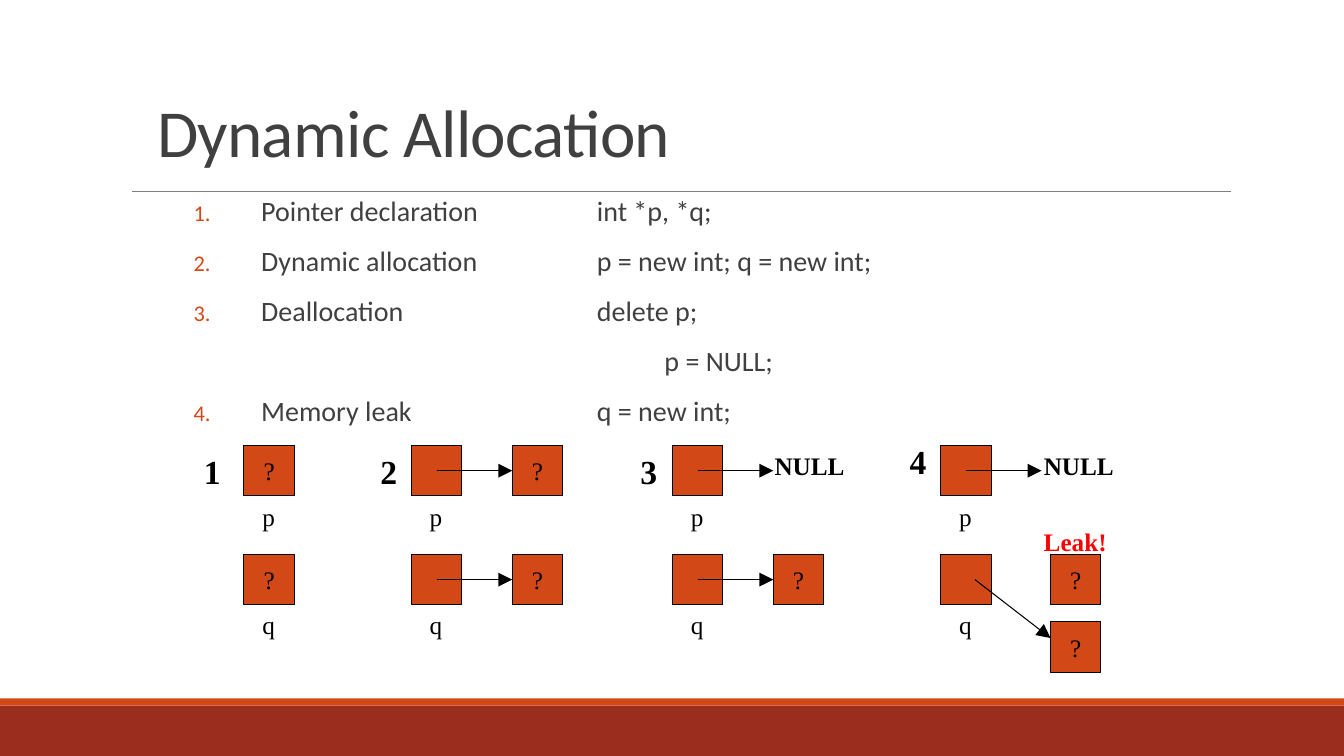
from dataclasses import dataclass

from lxml import etree
from pptx import Presentation
from pptx.dml.color import RGBColor
from pptx.enum.shapes import MSO_CONNECTOR, MSO_SHAPE
from pptx.enum.text import MSO_ANCHOR, MSO_AUTO_SIZE, PP_ALIGN
from pptx.oxml.ns import qn
from pptx.util import Inches, Pt

RECT = MSO_SHAPE.RECTANGLE
STRAIGHT = MSO_CONNECTOR.STRAIGHT
CENTER = PP_ALIGN.CENTER
MIDDLE, BOTTOM = MSO_ANCHOR.MIDDLE, MSO_ANCHOR.BOTTOM
GROW = MSO_AUTO_SIZE.SHAPE_TO_FIT_TEXT
LEFT_SIDE = 1


@dataclass(frozen=True)
class Theme:
    accent: str = "D34817"
    footer: str = "9B2D1F"
    rule: str = "808080"
    text: str = "404040"
    ink: str = "000000"
    alert: str = "FF0000"
    sans: str = "Calibri"
    serif: str = "Times New Roman"
    title: int = 48
    step: int = 24
    body: int = 20
    label: int = 18


class SlideBuilder:
    def __init__(self, prs, theme):
        self.theme = theme
        self.s = prs.slides.add_slide(prs.slide_layouts[6])

    def style(self, p, size, font, color, bold=False):
        for r in p.runs:
            r.font.size = Pt(size)
            r.font.name = font
            r.font.bold = bold
            r.font.color.rgb = RGBColor.from_string(color)

    def rect(self, x, y, w, h, fill):
        sp = self.s.shapes.add_shape(RECT, Inches(x), Inches(y), Inches(w), Inches(h))
        sp.shadow.inherit = False
        sp.fill.solid()
        sp.fill.fore_color.rgb = RGBColor.from_string(fill)
        sp.line.fill.background()
        return sp

    def cell(self, x, y, text=""):
        """Draw one memory cell, with its value if it has one."""
        t = self.theme
        sp = self.rect(x, y, CELL, CELL, t.accent)
        sp.line.color.rgb = RGBColor.from_string(t.ink)
        sp.line.width = Pt(0.75)
        if text:
            tf = sp.text_frame
            tf.text = text
            tf.word_wrap = False
            tf.vertical_anchor = MIDDLE
            tf.paragraphs[0].alignment = CENTER
            self.style(tf.paragraphs[0], t.label, t.serif, t.ink)
        return sp

    def label(self, x, y, w, h, text, size, color, bold=False):
        sp = self.s.shapes.add_textbox(Inches(x), Inches(y), Inches(w), Inches(h))
        tf = sp.text_frame
        tf.text = text
        tf.word_wrap = False
        tf.auto_size = GROW
        tf.paragraphs[0].alignment = CENTER
        self.style(tf.paragraphs[0], size, self.theme.serif, color, bold)

    def line(self, x1, y1, x2, y2, color, width):
        c = self.s.shapes.add_connector(
            STRAIGHT, Inches(x1), Inches(y1), Inches(x2), Inches(y2))
        c.line.color.rgb = RGBColor.from_string(color)
        c.line.width = Pt(width)
        etree.SubElement(c._element.spPr, qn("a:effectLst"))
        return c

    def arrow(self, x1, y1, x2, y2, target=None):
        c = self.line(x1, y1, x2, y2, self.theme.ink, 0.75)
        etree.SubElement(c.line._get_or_add_ln(), qn("a:tailEnd"),
                         type="triangle", w="lg", len="lg")
        if target is not None:
            c.end_connect(target, LEFT_SIDE)

    def title(self, x, y, w, h, text):
        t = self.theme
        tf = self.s.shapes.add_textbox(
            Inches(x), Inches(y), Inches(w), Inches(h)).text_frame
        tf.text = text
        tf.word_wrap = True
        tf.vertical_anchor = BOTTOM
        p = tf.paragraphs[0]
        p.line_spacing = 0.85
        self.style(p, t.title, t.sans, t.text)
        p.runs[0].font._element.set("spc", "-50")

    def number(self, p, start):
        pPr = p._p.get_or_add_pPr()
        color = etree.SubElement(pPr, qn("a:buClr"))
        etree.SubElement(color, qn("a:srgbClr"), val=self.theme.accent)
        etree.SubElement(pPr, qn("a:buSzPct"), val="80000")
        bullet = etree.SubElement(pPr, qn("a:buAutoNum"), type="arabicPeriod")
        if start > 1:
            bullet.set("startAt", str(start))

    def steps(self, x, y, w, h, items):
        """Write a list of (text, start) pairs; a start of None leaves out the number."""
        t = self.theme
        tf = self.s.shapes.add_textbox(
            Inches(x), Inches(y), Inches(w), Inches(h)).text_frame
        tf.word_wrap = True
        tf.margin_left = tf.margin_right = 0
        tf.text = "\n".join(text for text, _ in items)
        for p, (_, start) in zip(tf.paragraphs, items):
            p.line_spacing = 0.9
            p.space_before, p.space_after = Pt(12), Pt(2)
            pPr = p._p.get_or_add_pPr()
            pPr.set("marL", str(Inches(0.67)))
            pPr.set("indent", str(Inches(-0.67)))
            pPr.set("defTabSz", str(Inches(1)))
            if start:
                self.number(p, start)
            self.style(p, t.body, t.sans, t.text)


CELL = 0.5
ROWS = {"p": 4.42, "q": 5.5}
STEPS = [
    ("Pointer declaration\t\tint *p, *q;", 1),
    ("Dynamic allocation\t\tp = new int; q = new int;", 1),
    ("Deallocation\t\tdelete p;", 1),
    ("\t\t\t\t\tp = NULL;", None),
    ("Memory leak\t\tq = new int;", 4),
]
# Step number, its left and top, left of the pointer cells, their value
STAGES = [
    ("1", 1.92, 4.42, 2.42, "?"),
    ("2", 3.67, 4.42, 4.08, ""),
    ("3", 6.25, 4.42, 6.67, ""),
    ("4", 8.92, 4.33, 9.33, ""),
]
# Left of the pointer cell, left of its target, row
ALLOCATED = [(4.08, 5.08, "p"), (4.08, 5.08, "q"), (6.67, 7.67, "q")]
# Left of the arrow, left of the word
NULLS = [(6.92, 7.58), (9.58, 10.25)]
LEAK_X, NEW_Y = 10.42, 6.17


def main():
    prs = Presentation()
    prs.slide_width, prs.slide_height = Inches(13.33), Inches(7.5)
    t = Theme()
    b = SlideBuilder(prs, t)

    b.rect(0, 7, 13.33, 0.5, t.footer)
    b.rect(0, 6.93, 13.33, 0.07, t.accent)
    b.line(1.31, 1.9, 12.21, 1.9, t.rule, 0.5)
    b.title(1.46, 0.5, 8.5, 1.25, "Dynamic Allocation")
    b.steps(1.92, 1.91, 9.58, 2.67, STEPS)

    for step, step_x, step_y, x, value in STAGES:
        b.label(step_x, step_y, 0.37, 0.5, step, t.step, t.ink, True)
        for name, y in ROWS.items():
            b.cell(x, y, value)
            b.label(x + 0.08, y + CELL, 0.33, 0.4, name, t.label, t.ink)

    for x, target_x, row in ALLOCATED:
        y = ROWS[row]
        target = b.cell(target_x, y, "?")
        b.arrow(x + CELL / 2, y + CELL / 2, target_x, y + CELL / 2, target)

    for x, word_x in NULLS:
        y = ROWS["p"]
        b.arrow(x, y + CELL / 2, x + 0.75, y + CELL / 2)
        b.label(word_x, y, 0.9, 0.4, "NULL", t.label, t.ink, True)

    for y in (ROWS["q"], NEW_Y):
        b.cell(LEAK_X, y, "?")
    b.arrow(9.67, 5.75, LEAK_X, 6.33)
    b.label(10.25, 5.17, 0.83, 0.4, "Leak!", t.label, t.alert, True)

    prs.save("out.pptx")


if __name__ == "__main__":
    main()
